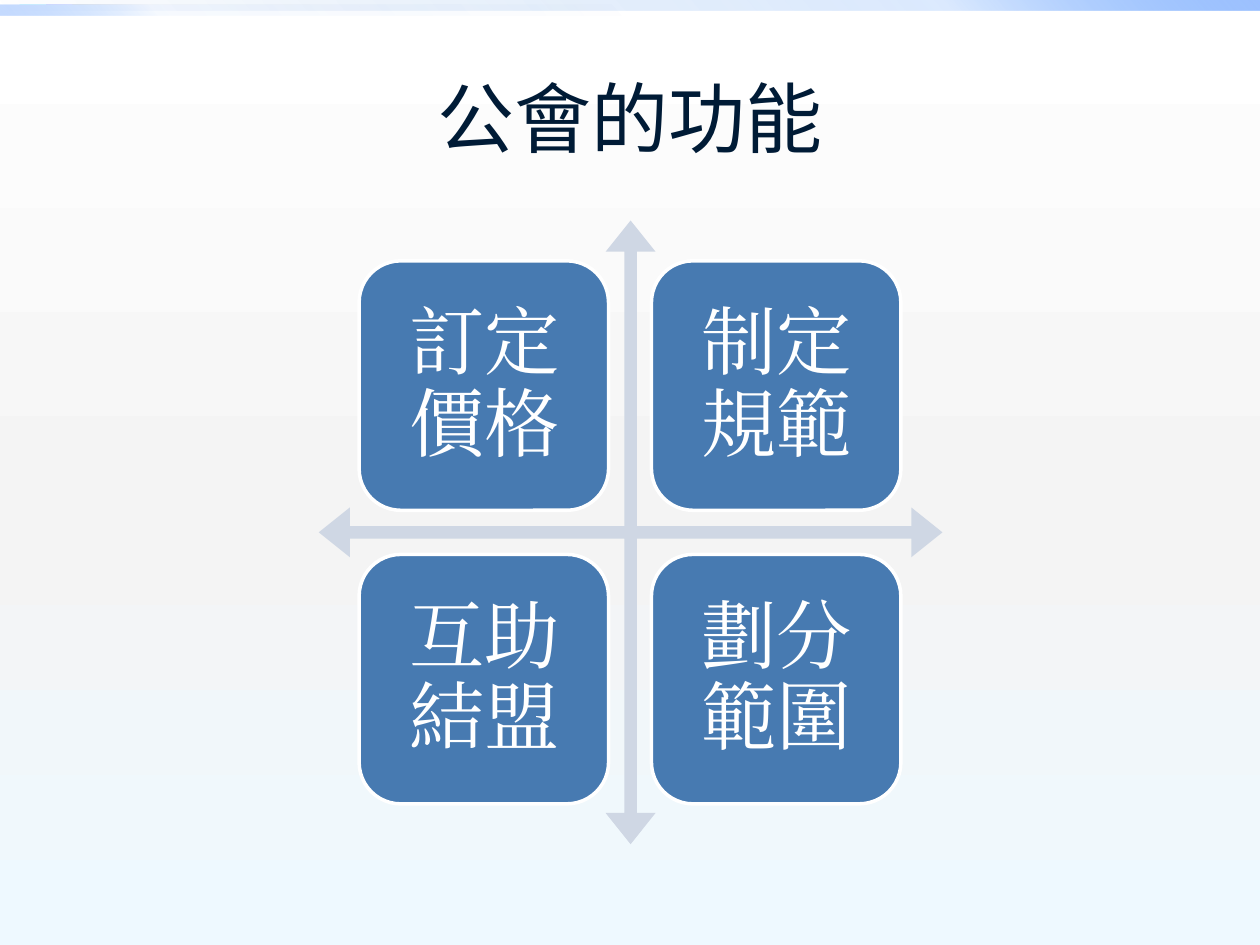
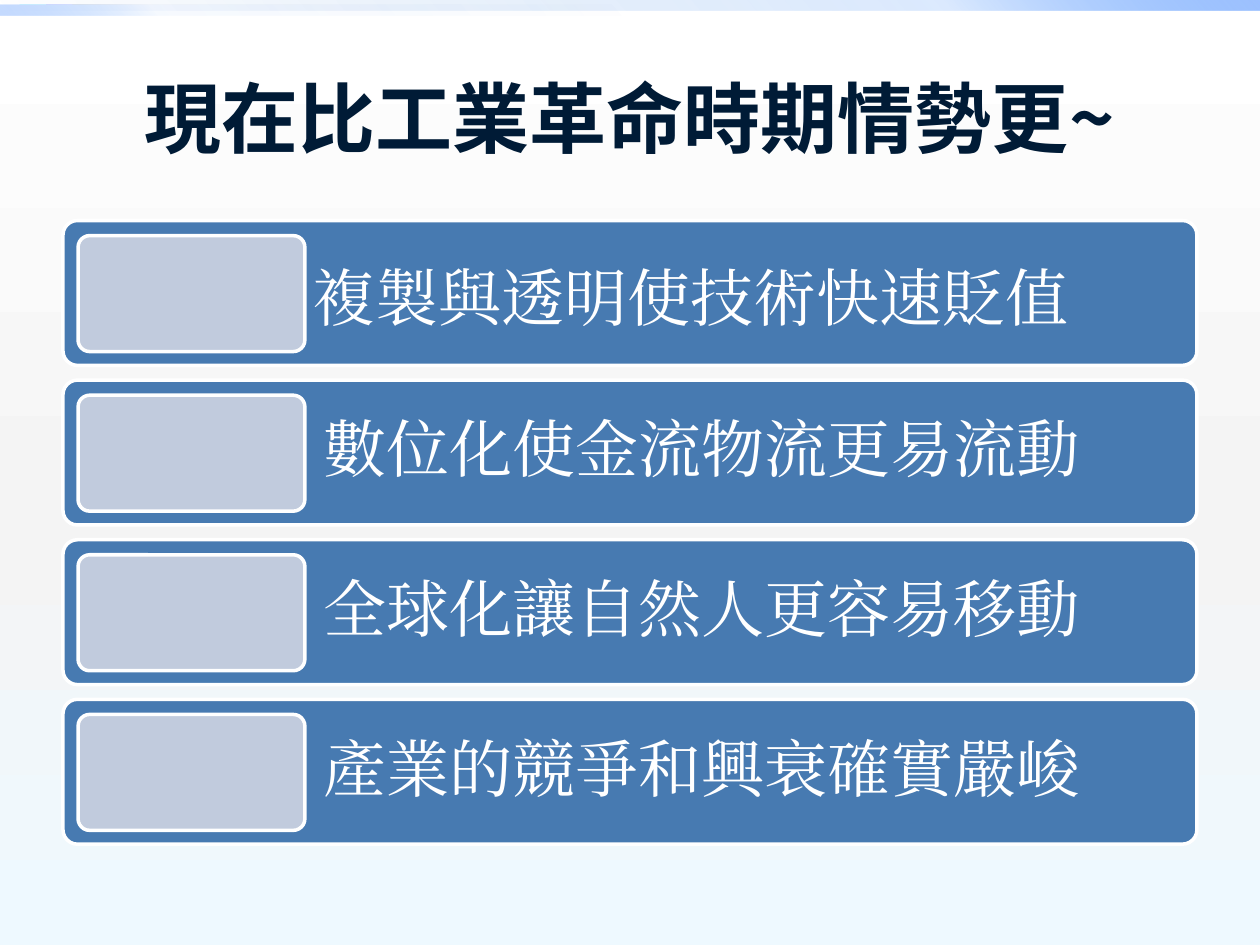
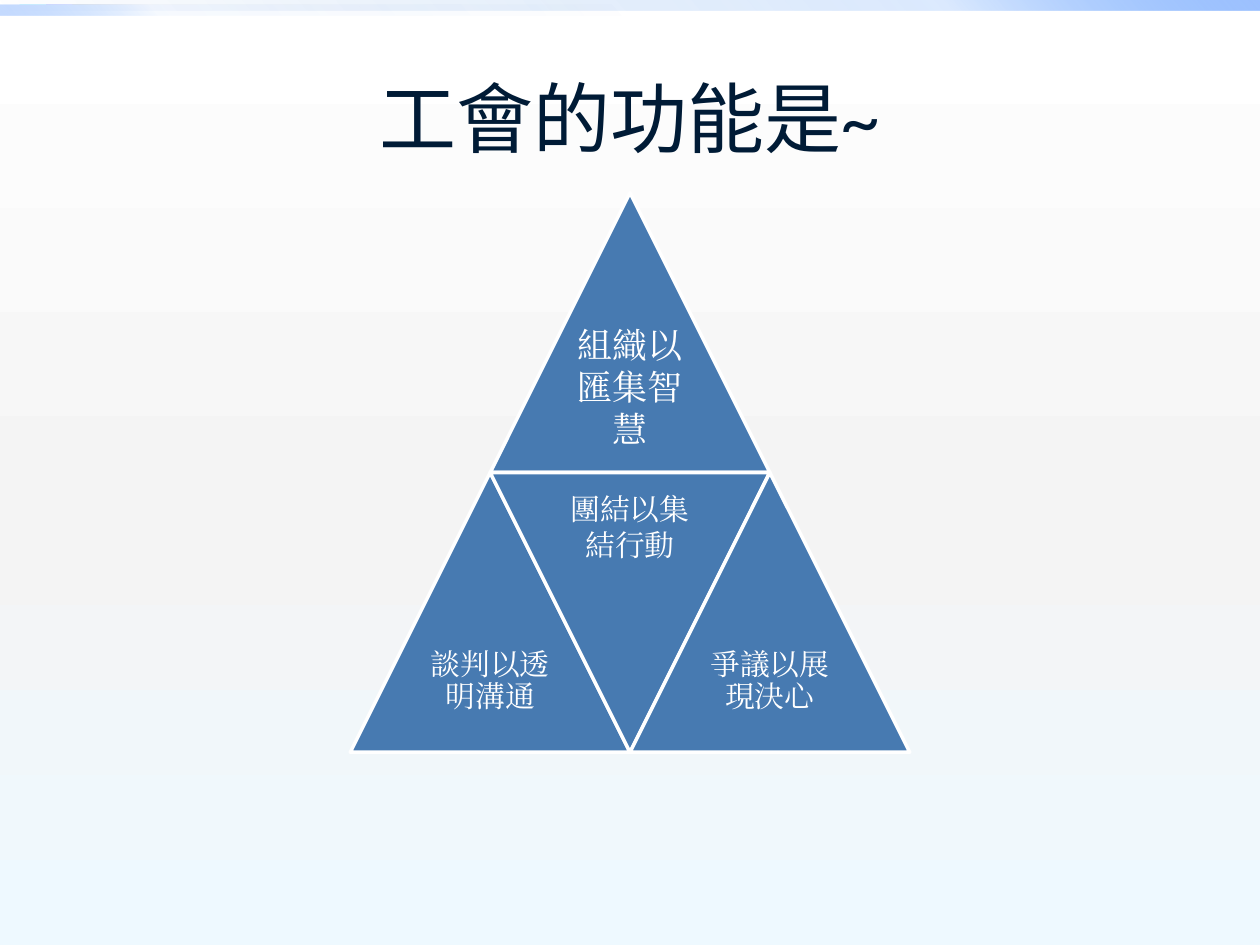
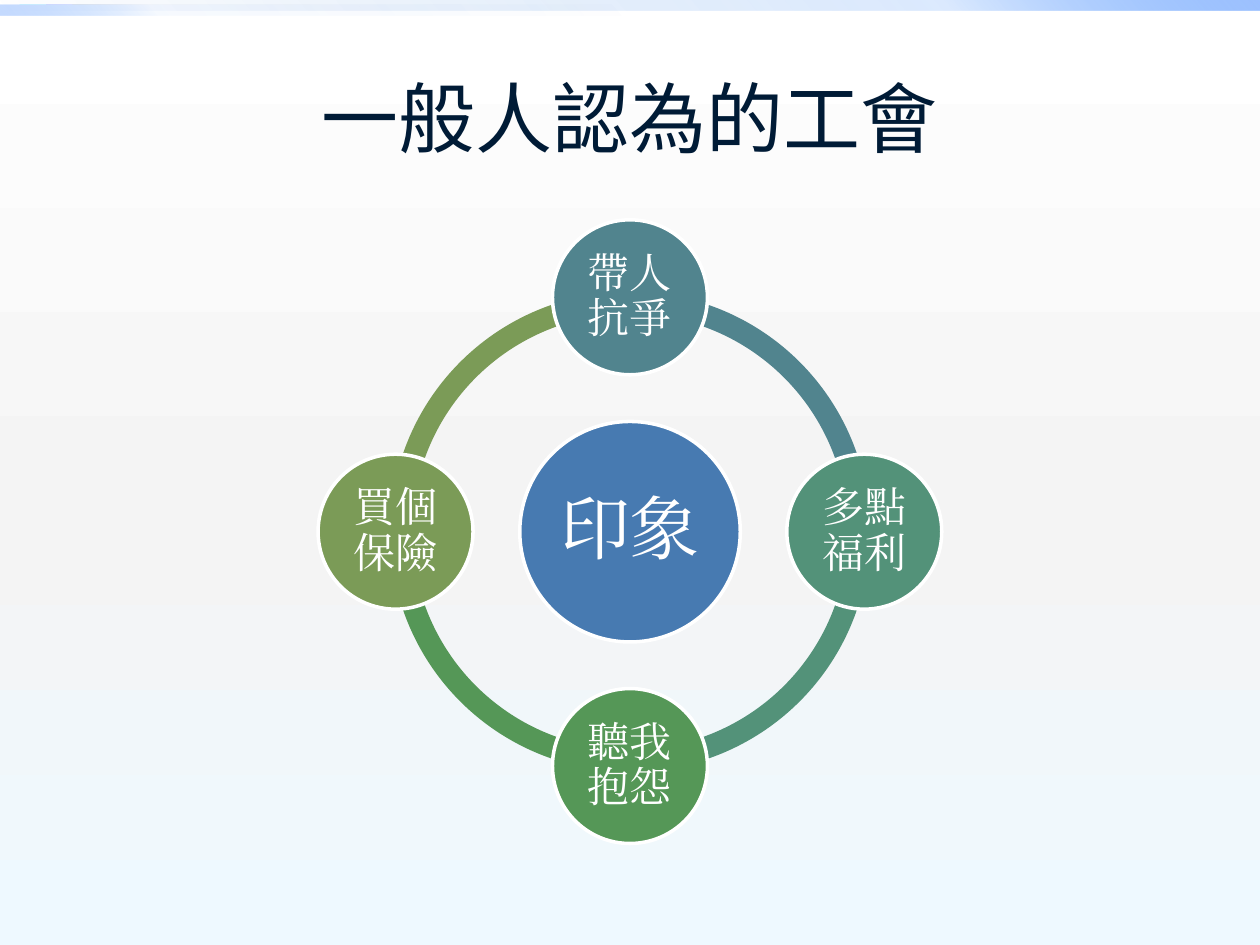
from itertools import product
from math import cos, radians, sin, sqrt

from lxml.etree import SubElement
from pptx import Presentation
from pptx.dml.color import RGBColor
from pptx.enum.shapes import MSO_SHAPE as Shape
from pptx.enum.text import MSO_ANCHOR as Anchor, PP_ALIGN as Align
from pptx.oxml.ns import qn
from pptx.util import Inches, Pt

WHITE = RGBColor(0xFF, 0xFF, 0xFF)
SMOKE = RGBColor(0xF4, 0xF4, 0xF4)
ICE = RGBColor(0xEE, 0xF9, 0xFF)
DEEP_BLUE = RGBColor(0x00, 0x58, 0xB7)
BRIGHT_BLUE = RGBColor(0x4F, 0x95, 0xFF)
SKY = RGBColor(0x9E, 0xC2, 0xFF)
NAVY = RGBColor(0x00, 0x1B, 0x36)
BLUE = RGBColor(0x47, 0x7A, 0xB1)
PALE_BLUE = RGBColor(0xC1, 0xCB, 0xDD)
ARROW_GREY = RGBColor(0xCF, 0xD7, 0xE4)
TEAL = RGBColor(0x51, 0x84, 0x8E)
SEA_GREEN = RGBColor(0x53, 0x92, 0x79)
GREEN = RGBColor(0x55, 0x97, 0x57)
OLIVE = RGBColor(0x7B, 0x9B, 0x57)


class Deck:
    """Holds the shared style and the slide being built."""

    title_font = "Calibri"
    body_font = "Cambria"
    backdrop = ((0, WHITE, 100), (55, SMOKE, 100), (100, ICE, 100))
    bands = (
        ((0, 0, 10, 0.08), ((0, DEEP_BLUE, 0), (75, BRIGHT_BLUE, 20), (100, SKY, 100)), 315),
        ((0, 0.04, 5, 0.08), ((0, DEEP_BLUE, 0), (75, BRIGHT_BLUE, 5), (100, SKY, 60)), 135),
    )

    def __init__(self):
        self.prs = Presentation()
        self.prs.slide_width, self.prs.slide_height = Inches(10), Inches(7.5)
        self.slide = None

    def new_slide(self, title, font=title_font, bold=False):
        self.slide = self.prs.slides.add_slide(self.prs.slide_layouts[6])
        self.gradient(self.slide.background.fill, self.slide, self.backdrop, 90)
        for box, stops, angle in self.bands:
            band = self.shape(Shape.RECTANGLE, box, WHITE, outlined=False)
            self.gradient(band.fill, band, stops, angle)
        self.text(title, (0.5, 0.3, 9, 1.25), 44, (0.1, 0.05, 0.1, 0.05),
                  font=font, color=NAVY, bold=bold, spacing=1)

    def gradient(self, fill, owner, stops, angle):
        fill.gradient()
        fill.gradient_angle = 360 - angle
        stop_list = owner._element.find(".//" + qn("a:gsLst"))
        for old_stop in list(stop_list):
            stop_list.remove(old_stop)
        for position, color, opacity in stops:
            stop = SubElement(stop_list, qn("a:gs"), pos=str(position * 1000))
            tint = SubElement(stop, qn("a:srgbClr"), val=str(color))
            if opacity < 100:
                SubElement(tint, qn("a:alpha"), val=str(opacity * 1000))

    def shape(self, kind, box, color, adjustments=(), outlined=True):
        shape = self.slide.shapes.add_shape(kind, *map(Inches, box))
        shape.shadow.inherit = False
        shape.fill.solid()
        shape.fill.fore_color.rgb = color
        if outlined:
            shape.line.color.rgb = WHITE
            shape.line.width = Pt(2)
        else:
            shape.line.fill.background()
        for index, value in enumerate(adjustments):
            shape.adjustments[index] = value
        return shape

    def text(self, words, box, size, insets, font=body_font, color=WHITE, bold=False,
             align=Align.CENTER, anchor=Anchor.MIDDLE, spacing=0.9):
        frame = self.slide.shapes.add_textbox(*map(Inches, box)).text_frame
        frame.word_wrap = True
        frame.vertical_anchor = anchor
        (frame.margin_left, frame.margin_top,
         frame.margin_right, frame.margin_bottom) = map(Inches, insets)
        paragraph = frame.paragraphs[0]
        paragraph.text = words
        paragraph.alignment = align
        paragraph.line_spacing = spacing
        style = paragraph.font
        style.name, style.size, style.bold = font, Pt(size), bold
        style.color.rgb = color
        SubElement(style._element, qn("a:ea"), typeface=font)

    def disc(self, words, center, diameter, color, size, inset):
        x, y = center

        def square(side):
            return x - side / 2, y - side / 2, side, side

        self.shape(Shape.OVAL, square(diameter), color)
        self.text(words, square(diameter / sqrt(2)), size, (inset,) * 4)


def guild_functions(deck):
    deck.new_slide("公會的功能")
    deck.shape(Shape.QUAD_ARROW, (2.53, 1.75, 4.95, 4.95), ARROW_GREY,
               (0.02, 0.04, 0.05), outlined=False)
    functions = ("訂定價格", "制定規範", "互助結盟", "劃分範圍")
    for function, (top, left) in zip(functions, product((2.07, 4.4), (2.85, 5.17))):
        deck.shape(Shape.ROUNDED_RECTANGLE, (left, top, 1.98, 1.98), BLUE)
        deck.text(function, (left + 0.1, top + 0.1, 1.79, 1.79), 43, (0.18,) * 4)


def present_situation(deck):
    deck.new_slide("現在比工業革命時期情勢更~", "Noto Sans CJK SC", bold=True)
    trends = ("複製與透明使技術快速貶值", "數位化使金流物流更易流動",
              "全球化讓自然人更容易移動", "產業的競爭和興衰確實嚴峻")
    for row, trend in enumerate(trends):
        top = 1.75 + row * 3.8 / 3
        deck.shape(Shape.ROUNDED_RECTANGLE, (0.5, top, 9, 1.15), BLUE, (0.1,))
        trend_box = (2.42, top, 7.08, 1.15)
        if row == 0:
            deck.text(trend, trend_box, 36, (0.06, 0.3, 0.06, 0.06),
                      align=Align.LEFT, anchor=Anchor.TOP, spacing=1)
        else:
            deck.text(trend, trend_box, 36, (0.15,) * 4, align=Align.LEFT)
        deck.shape(Shape.ROUNDED_RECTANGLE, (0.62, top + 0.12, 1.8, 0.92), PALE_BLUE, (0.1,))


def union_functions(deck):
    deck.new_slide("工會的功能是~")
    side = 2.22
    apex_top, base_top = 1.53, 1.53 + side
    raised = 0.25
    pieces = (
        ("組織以匯集智慧", 5, apex_top, 0, 20, 0.08, raised, 1),
        ("談判以透明溝通", 5 - side / 2, base_top, 0, 17, 0.07, 0, 0.9),
        ("團結以集結行動", 5, base_top, 180, 17, 0.07, raised, 1),
        ("爭議以展現決心", 5 + side / 2, base_top, 0, 17, 0.07, 0, 0.9),
    )
    for function, center, top, rotation, size, inset, lift, spacing in pieces:
        triangle = deck.shape(Shape.ISOSCELES_TRIANGLE,
                              (center - side / 2, top, side, side), BLUE)
        triangle.rotation = rotation
        text_top = top if rotation else top + side / 2
        deck.text(function, (center - side / 4, text_top, side / 2, side / 2), size,
                  (inset, inset, inset, inset + lift), spacing=spacing)


def union_impressions(deck):
    deck.new_slide("一般人認為的工會")
    center_x, center_y = 5, 4.22
    ring, orbit = 3.81, 1.86
    quarter, full_turn = 54, 216
    impressions = (("帶人抗爭", TEAL), ("多點福利", SEA_GREEN),
                   ("聽我抱怨", GREEN), ("買個保險", OLIVE))
    ring_box = (center_x - ring / 2, center_y - ring / 2, ring, ring)
    for step in reversed(range(4)):
        start = (step + 3) * quarter % full_turn
        deck.shape(Shape.BLOCK_ARC, ring_box, impressions[step][1],
                   (start, (start + quarter) % full_turn, 0.046), outlined=False)
    deck.disc("印象", (center_x, center_y), 1.75, BLUE, 40, 0.06)
    for step, (impression, color) in enumerate(impressions):
        angle = radians(step * 90 - 90)
        place = (center_x + orbit * cos(angle), center_y + orbit * sin(angle))
        deck.disc(impression, place, 1.23, color, 24, 0.03)


def main():
    deck = Deck()
    guild_functions(deck)
    present_situation(deck)
    union_functions(deck)
    union_impressions(deck)
    deck.prs.save("out.pptx")


if __name__ == "__main__":
    main()
